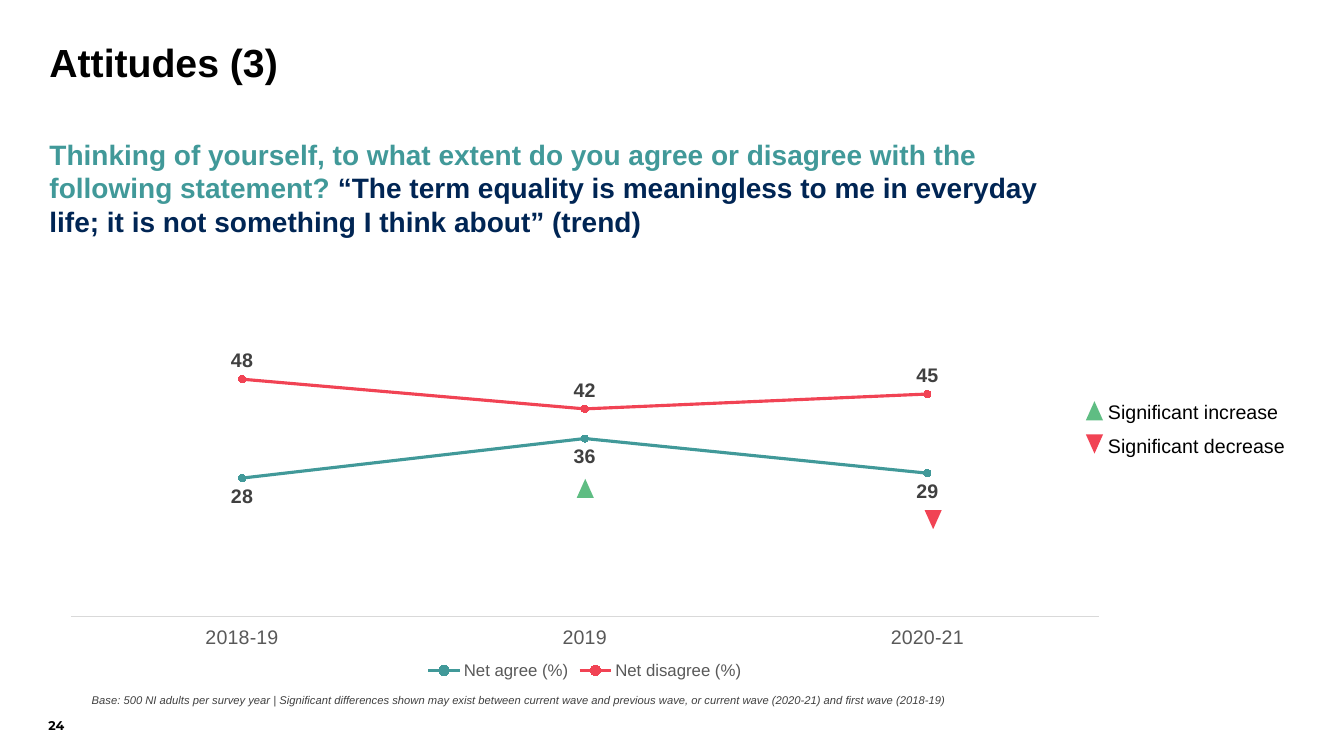
from lxml import etree
from pptx import Presentation
from pptx.chart.data import CategoryChartData
from pptx.dml.color import RGBColor
from pptx.enum.chart import (XL_CHART_TYPE, XL_LABEL_POSITION, XL_LEGEND_POSITION,
                             XL_MARKER_STYLE, XL_TICK_LABEL_POSITION, XL_TICK_MARK)
from pptx.enum.shapes import MSO_SHAPE
from pptx.enum.text import MSO_ANCHOR, PP_ALIGN
from pptx.oxml import parse_xml
from pptx.util import Inches, Pt

TEAL, RED, GREEN, NAVY = "419999", "F14354", "5FBD83", "002554"
BLACK, DARK_GREY, GREY, LIGHT_GREY = "000000", "404040", "595959", "D9D9D9"

TITLE = "Attitudes (3)"
QUESTION = [
    ("Thinking of yourself, to what extent do you agree or disagree with the "
     "following statement? ", TEAL),
    ("“The term equality is meaningless to me in everyday life; it is not "
     "something I think about” (trend)", NAVY),
]
WAVES = ["2018-19", "2019", "2020-21"]
SERIES = [
    ("Net agree (%)", [28, 36, 29], TEAL, XL_LABEL_POSITION.BELOW),
    ("Net disagree (%)", [48, 42, 45], RED, XL_LABEL_POSITION.ABOVE),
]
CHANGES = [(5.72, 4.75, True), (9.17, 5.06, False)]
KEY = [("Significant increase", True), ("Significant decrease", False)]
KEY_LEFT, KEY_TOP, KEY_STEP = 10.77, 3.98, 0.33
BASE = ("Base: 500 NI adults per survey year | Significant differences shown may exist "
        "between current wave and previous wave, or current wave (2020-21) and first "
        "wave (2018-19)")
PAGE = "24"
PLOT_LAYOUT = {"x": 0.02, "y": 0.02, "w": 0.96, "h": 0.8}


def color(value):
    return RGBColor.from_string(value)


def set_font(font, size, value=None, bold=False, italic=False, name="Arial"):
    font.name, font.size, font.bold, font.italic = name, Pt(size), bold, italic
    if value:
        font.color.rgb = color(value)


def set_frame(frame, anchor=MSO_ANCHOR.TOP, wrap=True, inset=0):
    frame.word_wrap = wrap
    frame.vertical_anchor = anchor
    frame.margin_left = frame.margin_right = Inches(inset)
    frame.margin_top = frame.margin_bottom = Inches(inset / 2)


def add_text(slide, box, runs, size, spacing=1.0, **options):
    """Add a text box of (text, color) runs; options go to its frame and font."""
    frame_options = {key: options.pop(key) for key in ("anchor", "wrap", "inset")
                     if key in options}
    frame = slide.shapes.add_textbox(*map(Inches, box)).text_frame
    set_frame(frame, **frame_options)
    paragraph = frame.paragraphs[0]
    paragraph.line_spacing = spacing
    set_font(paragraph.font, size, **options)
    for text, value in runs:
        run = paragraph.add_run()
        run.text = text
        run.font.color.rgb = color(value)


def add_change(slide, left, top, increase):
    """Add the green up or red down triangle."""
    triangle = slide.shapes.add_shape(MSO_SHAPE.ISOSCELES_TRIANGLE, Inches(left),
                                      Inches(top), Inches(0.17), Inches(0.19))
    triangle.shadow.inherit = False
    triangle.fill.solid()
    triangle.fill.fore_color.rgb = color(GREEN if increase else RED)
    triangle.line.fill.background()
    triangle.rotation = 0 if increase else 180


def set_plot_layout(chart):
    plot_area = chart.element.chart.plotArea
    for layout in plot_area.findall("{*}layout"):
        plot_area.remove(layout)
    layout = parse_xml(
        '<c:layout xmlns:c="http://schemas.openxmlformats.org/drawingml/2006/chart">'
        '<c:manualLayout><c:layoutTarget val="inner"/><c:xMode val="edge"/>'
        '<c:yMode val="edge"/></c:manualLayout></c:layout>')
    for key, value in PLOT_LAYOUT.items():
        etree.SubElement(layout[0], layout.tag.replace("layout", key), val=str(value))
    plot_area.insert(0, layout)


def add_trend_chart(slide):
    data = CategoryChartData(number_format="0")
    data.categories = WAVES
    for name, values, _, _ in SERIES:
        data.add_series(name, values)
    chart = slide.shapes.add_chart(XL_CHART_TYPE.LINE_MARKERS, Inches(0.49), Inches(3.1),
                                   Inches(10.62), Inches(3.68), data).chart
    set_font(chart.font, 10, BLACK)
    chart.has_title = False
    chart.has_legend = True
    chart.legend.position = XL_LEGEND_POSITION.BOTTOM
    chart.legend.include_in_layout = False
    set_font(chart.legend.font, 12, GREY)
    set_plot_layout(chart)

    waves = chart.category_axis
    waves.major_tick_mark = XL_TICK_MARK.NONE
    waves.tick_label_position = XL_TICK_LABEL_POSITION.LOW
    waves.format.line.color.rgb = color(LIGHT_GREY)
    waves.format.line.width = Pt(0.75)
    set_font(waves.tick_labels.font, 14, GREY)
    percent = chart.value_axis
    percent.minimum_scale, percent.maximum_scale = 0, 60
    percent.has_major_gridlines = False
    percent.visible = False

    chart.plots[0].vary_by_categories = False
    for series, (_, _, value, position) in zip(chart.plots[0].series, SERIES):
        series.smooth = False
        series.format.line.color.rgb = color(value)
        series.format.line.width = Pt(2.25)
        marker = series.marker
        marker.style, marker.size = XL_MARKER_STYLE.CIRCLE, 5
        marker.format.fill.solid()
        marker.format.fill.fore_color.rgb = color(value)
        marker.format.line.color.rgb = color(value)
        labels = series.data_labels
        labels.show_value = True
        labels.position = position
        labels.number_format, labels.number_format_is_linked = "0", False
        set_font(labels.font, 14, DARK_GREY, bold=True)


def main():
    presentation = Presentation()
    presentation.slide_width, presentation.slide_height = Inches(13.33), Inches(7.5)
    slide = presentation.slides.add_slide(presentation.slide_layouts[5])

    title = slide.shapes.title
    title.left, title.top = Inches(0.49), Inches(0.43)
    title.width, title.height = Inches(10.22), Inches(0.85)
    title.text_frame.text = TITLE
    set_frame(title.text_frame)
    paragraph = title.text_frame.paragraphs[0]
    paragraph.alignment = PP_ALIGN.LEFT
    paragraph.line_spacing = 0.9
    set_font(paragraph.font, 28, BLACK, bold=True)

    add_text(slide, (0.49, 1.36, 10.22, 1.01), QUESTION, 20, bold=True)
    add_trend_chart(slide)
    for change in CHANGES:
        add_change(slide, *change)
    for row, (label, increase) in enumerate(KEY):
        top = KEY_TOP + row * KEY_STEP
        add_change(slide, KEY_LEFT, top, increase)
        add_text(slide, (KEY_LEFT + 0.12, top - 0.08, 1.99, 0.2), [(label, BLACK)], 14,
                 spacing=1.1, inset=0.1)
    add_text(slide, (0.91, 6.87, 12.33, 0.14), [(BASE, DARK_GREY)], 8, spacing=1.1,
             anchor=MSO_ANCHOR.BOTTOM, italic=True)
    add_text(slide, (0.48, 6.87, 0.33, 0.4), [(PAGE, BLACK)], 9, wrap=False,
             anchor=MSO_ANCHOR.BOTTOM, bold=True, name="Montserrat")
    presentation.save("out.pptx")


if __name__ == "__main__":
    main()
